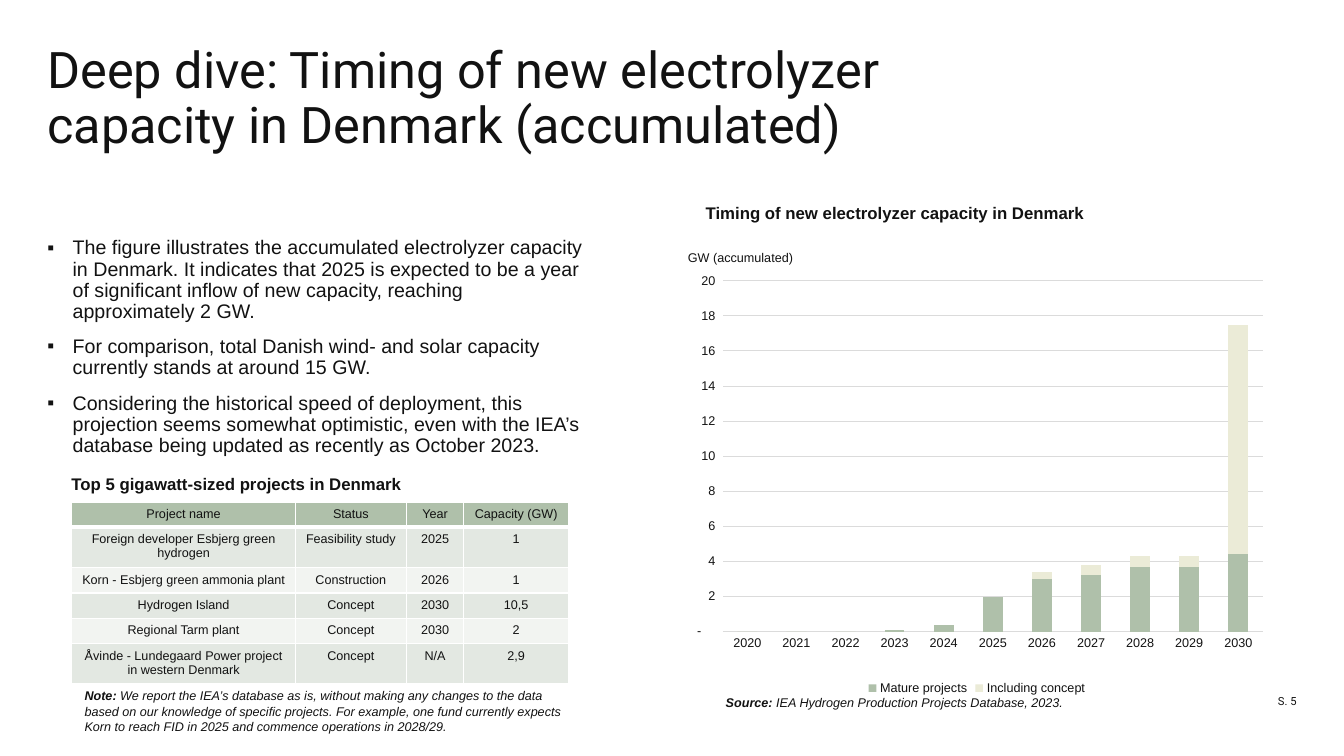
from lxml.etree import SubElement
from pptx import Presentation
from pptx.chart.data import CategoryChartData
from pptx.dml.color import RGBColor
from pptx.enum.chart import XL_CHART_TYPE, XL_LEGEND_POSITION, XL_TICK_MARK
from pptx.enum.text import MSO_ANCHOR, PP_ALIGN
from pptx.oxml.ns import qn
from pptx.util import Inches, Pt

INK = {"text": "121212", "sage": "AFC0AA", "cream": "EBEBD7", "grid": "DBDBDB",
       "odd": "E3E8E2", "even": "F2F4F1", "white": "FFFFFF"}


def tint(name):
    return RGBColor.from_string(INK[name])


def place(node, spot, **vals):
    """Give a chart part a fixed layout, in shares of the chart."""
    for old in node.findall(qn("c:layout")):
        node.remove(old)
    frame = SubElement(node, qn("c:layout"))
    node.insert(spot, frame)
    hand = SubElement(frame, qn("c:manualLayout"))
    for key, val in vals.items():
        SubElement(hand, qn("c:" + key)).set("val", str(val))


class Deck:
    def __init__(self, wide, high):
        self.file = Presentation()
        self.file.slide_width, self.file.slide_height = Inches(wide), Inches(high)
        self.slide = self.file.slides.add_slide(self.file.slide_layouts[6])
        self.face = "Arial"

    def x(self, share):
        return round(self.file.slide_width * share / 100)

    def y(self, share):
        return round(self.file.slide_height * share / 100)

    def area(self, left, top, wide, high):
        """Turn percentages of the slide into lengths."""
        return self.x(left), self.y(top), self.x(wide), self.y(high)

    def style(self, font, size, face=None, bold=False, slant=False):
        font.name, font.size = face or self.face, Pt(size)
        font.bold, font.italic = bold, slant
        font.color.rgb = tint("text")

    def run(self, para, words, size, **look):
        part = para.add_run()
        part.text = words
        self.style(part.font, size, **look)

    def box(self, area, flush=False, low=False):
        frame = self.slide.shapes.add_textbox(*self.area(*area)).text_frame
        frame.word_wrap = True
        if flush:
            frame.margin_left = frame.margin_right = 0
            frame.margin_top = frame.margin_bottom = 0
        if low:
            frame.vertical_anchor = MSO_ANCHOR.BOTTOM
        return frame

    def line(self, area, words, size, face=None, bold=False,
             flush=False, align=None, space=None):
        para = self.box(area, flush, low=flush).paragraphs[0]
        para.alignment, para.line_spacing = align, space
        self.run(para, words, size, face=face, bold=bold)

    def note(self, area, lead, words):
        para = self.box(area).paragraphs[0]
        self.run(para, lead, 9, bold=True, slant=True)
        self.run(para, words, 9, slant=True)

    def list(self, area, items):
        frame = self.box(area, flush=True)
        for i, words in enumerate(items):
            para = frame.add_paragraph() if i else frame.paragraphs[0]
            para.line_spacing = 0.9
            if i:
                para.space_before = Pt(10)
            props = para._p.get_or_add_pPr()
            props.set("marL", str(Inches(0.25)))
            props.set("indent", str(-Inches(0.25)))
            SubElement(props, qn("a:buFont")).set("typeface", self.face)
            SubElement(props, qn("a:buChar")).set("char", "▪")
            self.run(para, words, 14)

    def edge(self, cell, low):
        props = cell._tc.get_or_add_tcPr()
        for side in "LRTB":
            rim = SubElement(props, qn("a:ln" + side))
            rim.set("w", str(Pt(low if side == "B" else 1)))
            fill = SubElement(rim, qn("a:solidFill"))
            SubElement(fill, qn("a:srgbClr")).set("val", INK["white"])

    def table(self, area, cols, rows, data):
        grid = self.slide.shapes.add_table(len(rows), len(cols), *self.area(*area)).table
        for col, wide in zip(grid.columns, cols):
            col.width = self.x(wide)
        for row, high in zip(grid.rows, rows):
            row.height = self.y(high)
        for i, line in enumerate(data):
            for j, words in enumerate(line):
                cell = grid.cell(i, j)
                self.edge(cell, 1 if i else 3)
                cell.fill.solid()
                cell.fill.fore_color.rgb = tint(("odd" if i % 2 else "even") if i else "sage")
                para = cell.text_frame.paragraphs[0]
                para.alignment = PP_ALIGN.CENTER
                self.run(para, words, 9)

    def chart(self, area, cats, series, unit):
        data = CategoryChartData()
        data.categories = cats
        for name, vals, _ in series:
            data.add_series(name, vals)
        chart = self.slide.shapes.add_chart(
            XL_CHART_TYPE.COLUMN_STACKED, *self.area(*area), data).chart
        self.style(chart.font, 9)
        chart.has_title = False
        chart.has_legend = True
        chart.legend.position = XL_LEGEND_POSITION.BOTTOM
        chart.legend.include_in_layout = False
        self.style(chart.legend.font, 9)

        # Columns
        plot = chart.plots[0]
        plot.gap_width, plot.overlap, plot.vary_by_categories = 150, 100, False
        for bars, (_, _, hue) in zip(plot.series, series):
            bars.format.fill.solid()
            bars.format.fill.fore_color.rgb = tint(hue)
        place(chart._chartSpace.chart.plotArea, 0, layoutTarget="inner", xMode="edge",
              yMode="edge", x=0.07, y=0.093, w=0.914, h=0.76)

        # Axes
        base, side = chart.category_axis, chart.value_axis
        for axis in (base, side):
            axis.major_tick_mark = axis.minor_tick_mark = XL_TICK_MARK.NONE
            self.style(axis.tick_labels.font, 9)
        side.has_major_gridlines = True
        for rule in (base.format.line, side.major_gridlines.format.line):
            rule.color.rgb, rule.width = tint("grid"), Pt(0.75)
        side.format.line.fill.background()
        side.minimum_scale, side.maximum_scale, side.major_unit = 0, 20, 2
        side.tick_labels.number_format = '_-* #,##0_-;\\-* #,##0_-;_-* "-"??_-;_-@_'
        side.tick_labels.number_format_is_linked = False

        # Unit above the value axis
        head = side.axis_title
        self.run(head.text_frame.paragraphs[0], unit, 9)
        node = head._element
        node.find(".//" + qn("a:bodyPr")).set("rot", "0")
        place(node, 1, xMode="edge", yMode="edge", x=0.007, y=0.02)


def main():
    deck = Deck(13.33, 7.5)

    # Title and page number
    deck.line((3.53, 6.27, 75, 14.13),
              "Deep dive: Timing of new electrolyzer capacity in Denmark (accumulated)",
              36, face="Roboto", flush=True, space=0.9)
    deck.line((88.75, 88.4, 7.73, 5.2), "S. 5", 8, face="Roboto",
              flush=True, align=PP_ALIGN.RIGHT)

    # Findings
    deck.list((3.53, 31.47, 39.9, 29.6), [
        "The figure illustrates the accumulated electrolyzer capacity in Denmark. It indicates "
        "that 2025 is expected to be a year of significant inflow of new capacity, reaching "
        "approximately 2 GW.",
        "For comparison, total Danish wind- and solar capacity currently stands at around 15 GW.",
        "Considering the historical speed of deployment, this projection seems somewhat "
        "optimistic, even with the IEA’s database being updated as recently as October 2023.",
    ])

    # Project table
    deck.line((4.58, 62, 31.88, 4), "Top 5 gigawatt-sized projects in Denmark", 12, bold=True)
    one, two = 3.2, 5.07
    deck.table((5.33, 66.4, 36.98, 22.94), (16.65, 8.25, 4.28, 7.8),
               (one, two, one, one, one, two), [
        ("Project name", "Status", "Year", "Capacity (GW)"),
        ("Foreign developer Esbjerg green hydrogen", "Feasibility study", "2025", "1"),
        ("Korn - Esbjerg green ammonia plant", "Construction", "2026", "1"),
        ("Hydrogen Island", "Concept", "2030", "10,5"),
        ("Regional Tarm plant", "Concept", "2030", "2"),
        ("Åvinde - Lundegaard Power project in western Denmark", "Concept", "N/A", "2,9"),
    ])
    deck.note((5.55, 90.4, 36.98, 7.47), "Note: ",
              "We report the IEA’s database as is, without making any changes to the data based "
              "on our knowledge of specific projects. For example, one fund currently expects "
              "Korn to reach FID in 2025 and commence operations in 2028/29.")

    # Capacity chart
    deck.chart((50.71, 31.47, 43.96, 61.07), [str(year) for year in range(2020, 2031)], [
        ("Mature projects", (0, 0, 0, 0.1, 0.4, 2, 3, 3.2, 3.7, 3.7, 4.4), "sage"),
        ("Including concept", (0, 0, 0, 0, 0, 0, 0.4, 0.6, 0.6, 0.6, 13.1), "cream"),
    ], "GW (accumulated)")
    deck.note((53.26, 91.33, 27.08, 3.33), "Source:",
              " IEA Hydrogen Production Projects Database, 2023.")
    deck.line((51.76, 26.13, 46, 4), "Timing of new electrolyzer capacity in Denmark",
              12, bold=True)

    deck.file.save("out.pptx")


if __name__ == "__main__":
    main()
